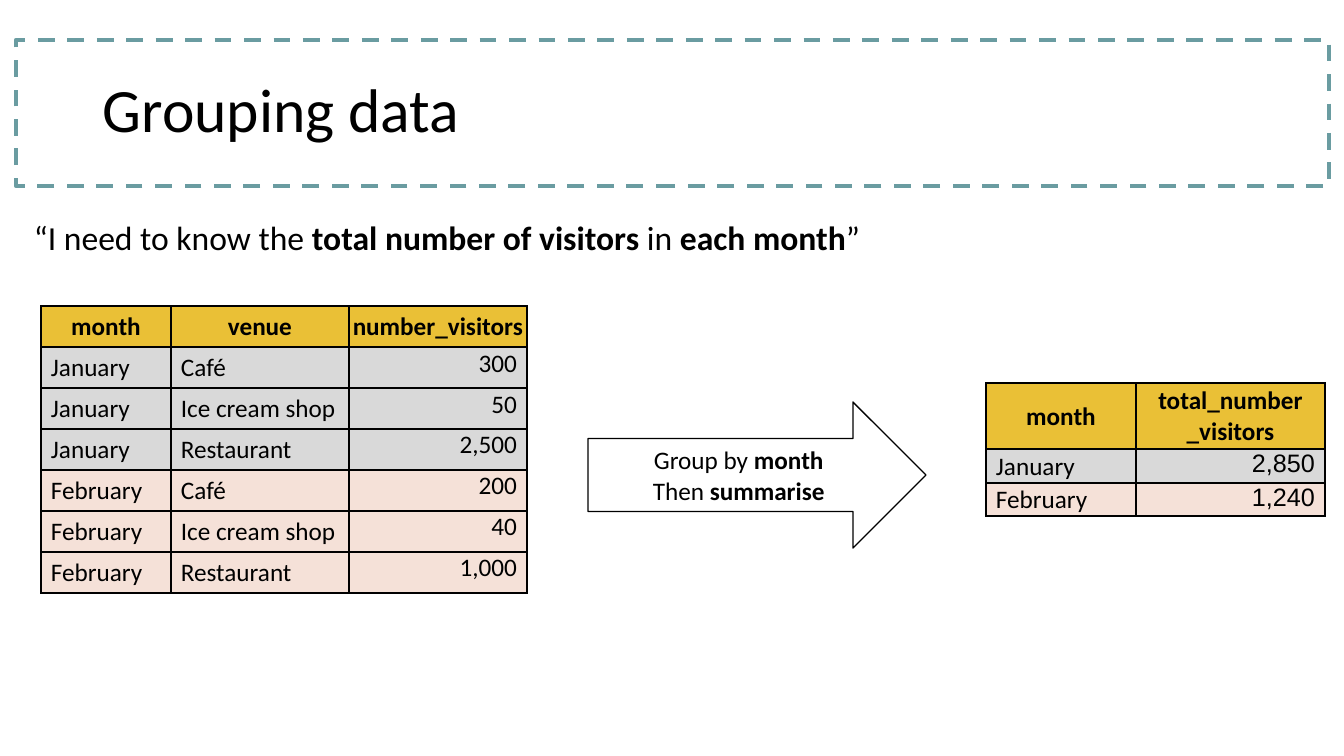
from lxml.etree import SubElement
from pptx import Presentation
from pptx.dml.color import RGBColor
from pptx.enum.dml import MSO_LINE
from pptx.enum.shapes import MSO_SHAPE
from pptx.enum.text import MSO_ANCHOR, PP_ALIGN
from pptx.oxml.ns import qn
from pptx.util import Pt

PX = 12192000 / 1344
COLORS = {"text": "000000", "frame": "6A9CA1", "header": "EAC036",
          "January": "D9D9D9", "February": "F5E1D8", "arrow": "FFFFFF"}

# Each paragraph is a list of (text, bold) spans.
TITLE = [[("Grouping data", False)]]
QUOTE = [[("“I need to know the ", False), ("total number of visitors ", True),
          ("in ", False), ("each month", True), ("”", False)]]
STEPS = [[("Group by ", False), ("month", True)],
         [("Then ", False), ("summarise", True)]]

TABLES = [
    {"left": 41, "top": 306, "columns": [130, 178, 178], "heights": [41] * 7,
     "number_font": "Calibri",
     "rows": [("month", "venue", "number_visitors"),
              ("January", "Café", "300"),
              ("January", "Ice cream shop", "50"),
              ("January", "Restaurant", "2,500"),
              ("February", "Café", "200"),
              ("February", "Ice cream shop", "40"),
              ("February", "Restaurant", "1,000")]},
    {"left": 986, "top": 383, "columns": [150, 189], "heights": [66, 34, 33],
     "number_font": "Arial",
     "rows": [("month", "total_number\n_visitors"),
              ("January", "2,850"),
              ("February", "1,240")]},
]


def px(length):
    return round(length * PX)


def color(name):
    return RGBColor.from_string(COLORS[name])


def set_all(target, values):
    for name, value in values.items():
        setattr(target, name, value)


def write(frame, paragraphs, size, font="Calibri", **paragraph_format):
    for index, spans in enumerate(paragraphs):
        para = frame.add_paragraph() if index else frame.paragraphs[0]
        set_all(para, paragraph_format)
        for text, bold in spans:
            span = para.add_run()
            span.text = text
            set_all(span.font, {"size": Pt(size), "name": font, "bold": bold})
            span.font.color.rgb = color("text")


def add_text(page, bounds, paragraphs, size, anchor, **paragraph_format):
    frame = page.shapes.add_textbox(*map(px, bounds)).text_frame
    set_all(frame, {"word_wrap": True, "vertical_anchor": anchor})
    write(frame, paragraphs, size, **paragraph_format)


def add_outlined(page, kind, bounds, line_color, line_width):
    shape = page.shapes.add_shape(kind, *map(px, bounds))
    shape.shadow.inherit = False
    shape.line.color.rgb = color(line_color)
    shape.line.width = Pt(line_width)
    return shape


def add_borders(cell):
    properties = cell._tc.get_or_add_tcPr()
    for side in ("a:lnL", "a:lnR", "a:lnT", "a:lnB"):
        line = SubElement(properties, qn(side), w=str(Pt(1)))
        fill = SubElement(line, qn("a:solidFill"))
        SubElement(fill, qn("a:srgbClr"), val=COLORS["text"])


def fill_cell(cell, text, row_color, role, font):
    align = {"header": PP_ALIGN.CENTER, "label": PP_ALIGN.LEFT,
             "number": PP_ALIGN.RIGHT}[role]
    set_all(cell, {
        "margin_left": px(10 if role == "label" else 1),
        "margin_right": px(10 if role == "number" else 1),
        "margin_top": px(1), "margin_bottom": 0,
        "vertical_anchor": MSO_ANCHOR.TOP if role == "number" else MSO_ANCHOR.MIDDLE})
    add_borders(cell)
    cell.fill.solid()
    cell.fill.fore_color.rgb = color(row_color)
    lines = [[(line, role == "header")] for line in text.split("\n")]
    write(cell.text_frame, lines, 18, font, alignment=align)


def add_data_table(page, data):
    rows, columns, heights = data["rows"], data["columns"], data["heights"]
    table = page.shapes.add_table(
        len(rows), len(columns), px(data["left"]), px(data["top"]),
        px(sum(columns)), px(sum(heights))).table
    for column, width in zip(table.columns, columns):
        column.width = px(width)
    for row_index, values in enumerate(rows):
        table.rows[row_index].height = px(heights[row_index])
        for column_index, text in enumerate(values):
            is_number = column_index == len(columns) - 1
            role = "header" if row_index == 0 else "number" if is_number else "label"
            fill_cell(table.cell(row_index, column_index), text,
                      values[0] if row_index else "header", role,
                      data["number_font"] if role == "number" else "Calibri")


def main():
    deck = Presentation()
    set_all(deck, {"slide_width": px(1344), "slide_height": px(756)})
    page = deck.slides.add_slide(deck.slide_layouts[6])

    title_frame = add_outlined(page, MSO_SHAPE.RECTANGLE, (16, 40, 1313, 146), "frame", 3)
    title_frame.fill.background()
    title_frame.line.dash_style = MSO_LINE.DASH

    add_text(page, (93, 40, 1159, 146), TITLE, 44, MSO_ANCHOR.MIDDLE, line_spacing=0.9)
    add_text(page, (24, 212, 851, 50), QUOTE, 24, MSO_ANCHOR.TOP)

    for data in TABLES:
        add_data_table(page, data)

    arrow = add_outlined(page, MSO_SHAPE.RIGHT_ARROW, (588, 402, 338, 146), "text", 1)
    arrow.fill.solid()
    arrow.fill.fore_color.rgb = color("arrow")
    arrow.text_frame.word_wrap = True
    arrow.text_frame.vertical_anchor = MSO_ANCHOR.MIDDLE
    write(arrow.text_frame, STEPS, 18, alignment=PP_ALIGN.CENTER)

    deck.save("out.pptx")


if __name__ == "__main__":
    main()
